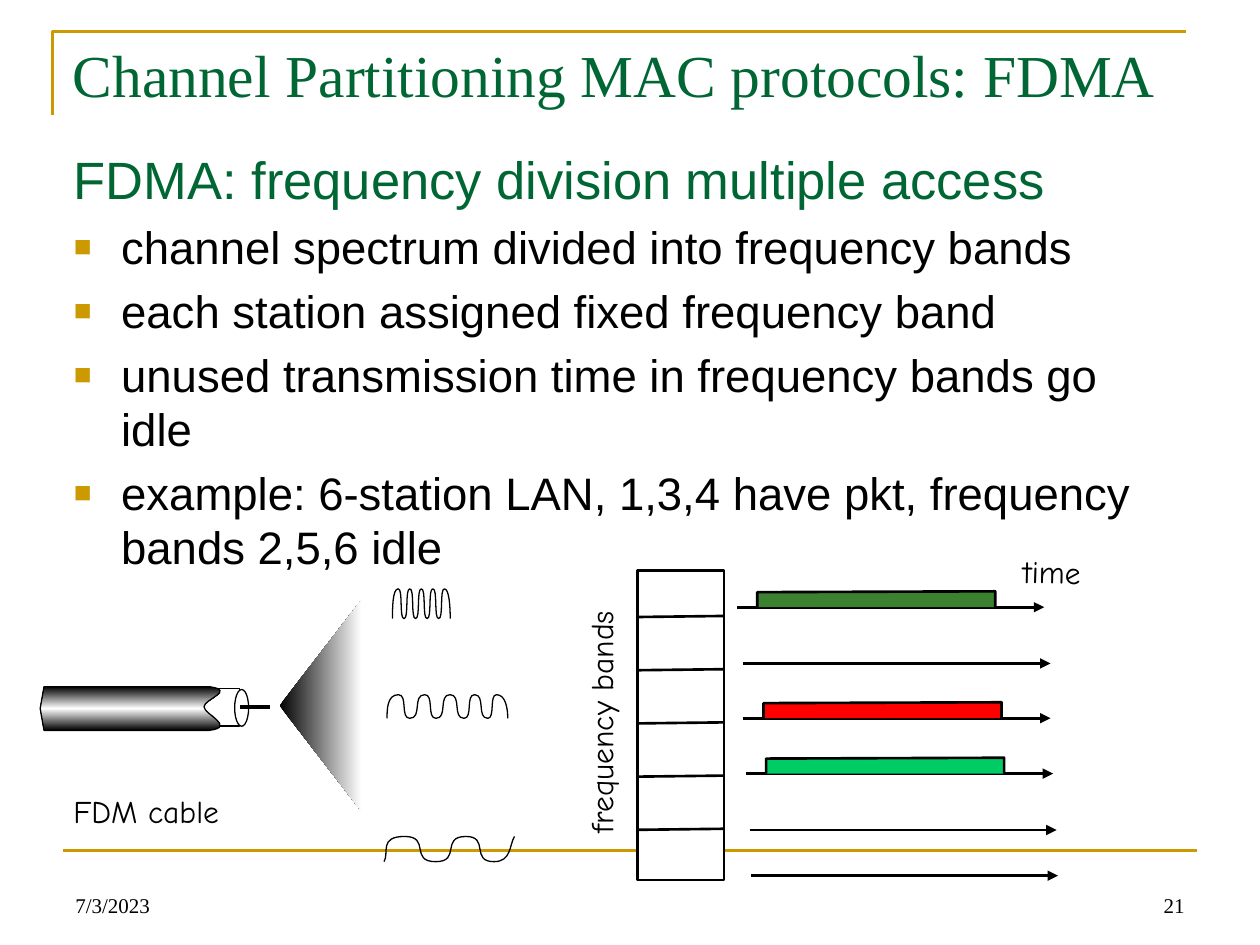
from lxml import etree
from pptx import Presentation
from pptx.dml.color import RGBColor
from pptx.enum import shapes as kinds, text as tx
from pptx.oxml import parse_xml
from pptx.oxml.ns import qn
from pptx.util import Pt

NS = 'xmlns:a="http://schemas.openxmlformats.org/drawingml/2006/main"'
GOLD, GREEN, BLACK, WHITE = "CC9900", "006633", "000000", "FFFFFF"
SERIF, SANS, HAND = "Times New Roman", "Arial", "Comic Neue"


def color(code):
    return RGBColor.from_string(code)


def pen(shape, code, width):
    shape.line.color.rgb = color(code)
    shape.line.width = Pt(width)


def paint(shape, fill=None, line=BLACK, width=1.5):
    """Flat fill (or none) and outline (or none), without shadow."""
    shape.shadow.inherit = False
    if fill:
        shape.fill.solid()
        shape.fill.fore_color.rgb = color(fill)
    else:
        shape.fill.background()
    if line:
        pen(shape, line, width)
    else:
        shape.line.fill.background()


def blend(shape, stops, angle):
    """Replace the fill by a linear gradient."""
    marks = "".join(f'<a:gs pos="{at * 1000}"><a:srgbClr val="{code}"/></a:gs>'
                    for at, code in stops)
    grad = parse_xml(f'<a:gradFill {NS}><a:gsLst>{marks}</a:gsLst>'
                     f'<a:lin ang="{angle * 60000}" scaled="0"/></a:gradFill>')
    props = shape.element.spPr
    props.replace(props.find(qn("a:solidFill")), grad)


def rule(slide, x1, y1, x2, y2, code=BLACK, width=1.5, arrow=False):
    line = slide.shapes.add_connector(kinds.MSO_CONNECTOR.STRAIGHT,
                                      Pt(x1), Pt(y1), Pt(x2), Pt(y2))
    pen(line, code, width)
    if arrow:
        etree.SubElement(line.line._get_or_add_ln(), qn("a:tailEnd"), type="triangle")
    etree.SubElement(line.element.spPr, qn("a:effectLst"))


def block(slide, kind, x, y, w, h, **look):
    shape = slide.shapes.add_shape(kind, Pt(x), Pt(y), Pt(w), Pt(h))
    paint(shape, WHITE, **look)


def trace(slide, x, y, start, steps, close=False, **look):
    """Outline relative to (x, y); a step is [point] or [control, control, point]."""
    def spot(point):
        return Pt(x + point[0]), Pt(y + point[1])

    draft = slide.shapes.build_freeform(*spot(start), scale=1.0)
    draft.add_line_segments([spot(p) for step in steps for p in step], close=close)
    shape = draft.convert_to_shape()
    # Join the three legs of each curved step into one cubic
    legs = iter(list(shape.element.spPr.iter(qn("a:lnTo"))))
    for step in steps:
        first, *rest = [next(legs) for _ in step]
        if rest:
            first.tag = qn("a:cubicBezTo")
            for leg in rest:
                first.append(leg[0])
                leg.getparent().remove(leg)
    paint(shape, **look)
    return shape


def style(par, size, font, code):
    par.font.size = Pt(size)
    par.font.name = font
    par.font.color.rgb = color(code)


def label(slide, words, x, y, w, h, size=18, font=HAND, turn=0,
          align=tx.PP_ALIGN.LEFT, anchor=tx.MSO_ANCHOR.TOP):
    box = slide.shapes.add_textbox(Pt(x), Pt(y), Pt(w), Pt(h))
    box.rotation = turn
    frame = box.text_frame
    frame.word_wrap = False
    frame.vertical_anchor = anchor
    par = frame.paragraphs[0]
    par.text = words
    par.alignment = align
    style(par, size, font, BLACK)


def place(holder, x, y, w, h):
    holder.left, holder.top, holder.width, holder.height = Pt(x), Pt(y), Pt(w), Pt(h)
    frame = holder.text_frame
    frame.word_wrap = True
    frame.auto_size = tx.MSO_AUTO_SIZE.NONE
    frame.vertical_anchor = tx.MSO_ANCHOR.TOP
    return frame


def border(slide, x, y, w, h):
    # Corner at top left, rule and footer at bottom
    trace(slide, x, y, (0, 48), [[(0, 0)], [(w, 0)]], line=GOLD)
    rule(slide, x + 6, y + h, x + 6 + w, y + h, GOLD)
    foot = dict(y=y + h + 5.7, w=168, h=36, size=12, font=SERIF,
                anchor=tx.MSO_ANCHOR.BOTTOM)
    label(slide, "7/3/2023", x=x + 6, **foot)
    label(slide, "21", x=x + w - 162, align=tx.PP_ALIGN.RIGHT, **foot)


def title(slide, words, x, y, w, h):
    par = place(slide.shapes.title, x, y, w, h).paragraphs[0]
    par.text = words
    par.alignment = tx.PP_ALIGN.LEFT
    style(par, 34, SERIF, GREEN)


def body(slide, head, items, x, y, w, h):
    frame = place(slide.placeholders[1], x, y, w, h)
    for i, words in enumerate([head] + items):
        par = frame.add_paragraph() if i else frame.paragraphs[0]
        par.text = words
        style(par, 26 if i else 30, SANS, BLACK if i else GREEN)
        par.space_before = Pt(5.5 if i else 6)
        par.line_spacing = Pt(31 if i else 36)
        props = par._p.get_or_add_pPr()
        props.set("marL", str(Pt(27)))
        props.set("indent", str(Pt(-27)))
        marks = (f'<a:buClr {NS}><a:srgbClr val="{GOLD}"/></a:buClr>',
                 f'<a:buSzPct {NS} val="65000"/>', f'<a:buFont {NS} typeface="{SANS}"/>',
                 f'<a:buChar {NS} char="■"/>') if i else (f'<a:buNone {NS}/>',)
        for mark in marks:
            props.append(parse_xml(mark))


def bands(slide, x, y, w, h):
    # Stack of six bands
    block(slide, kinds.MSO_SHAPE.RECTANGLE, x, y, w, h)
    for i in range(5):
        at = y + 26.4 + 30.4 * i
        rule(slide, x, at + 0.3, x + w, at - 0.3)
    # Time axis of each band, with a bar where a packet is sent
    axes = [(56.9, 21.1, "3B812F"), (60.5, 53.2, None), (60.5, 84.5, "FF0000"),
            (62, 116.2, "00CC66"), (64, 148.4, None), (64.8, 174.5, None)]
    for dx, dy, fill in axes:
        rule(slide, x + dx, y + dy, x + dx + 175.5, y + dy, arrow=True)
        if fill:
            trace(slide, x + dx + 11.5, y + dy, (0, 0),
                  [[(0, -8.6)], [(136, -9.1)], [(136, 0)]], fill=fill)
    label(slide, "frequency bands", x - 97.2, y + 66.5, 152.6, 28.8, turn=270)
    label(slide, "time", x + 213.1, y - 13.7, 51.8, 28.8, turn=1.1)


def cable(slide, x, y):
    # Cone of light
    cone = trace(slide, x, y, (183.6, -49.7), [[(136.8, 10.8)], [(183.6, 71.3)]],
                 close=True, fill=WHITE, line=None)
    blend(cone, [(0, BLACK), (100, WHITE)], 0)
    # Core, torn jacket, end and wire
    block(slide, kinds.MSO_SHAPE.RECTANGLE, x + 93.1, y + 1, 20.9, 21.6, width=0.75)
    edge = [[(0, 12.5)], [(2.2, 25)], [(96.5, 25)],
            [(112.3, 23), (93.6, 15.8), (93.6, 11.5)],
            [(93.6, 7.2), (112.3, 2.2), (96.5, 0)]]
    jacket = trace(slide, x, y, (2.2, 0), edge, close=True, fill=WHITE, width=0.75)
    blend(jacket, [(0, BLACK), (50, WHITE), (100, BLACK)], 90)
    block(slide, kinds.MSO_SHAPE.OVAL, x + 111.1, y + 1.6, 8, 21, width=0.75)
    rule(slide, x + 114.1, y + 11.5, x + 131.3, y + 11.5, width=2.25)
    label(slide, "FDM cable", x + 11.8, y + 56.9, 103.7, 28.8)


def wave(slide, x, y, h, xs, lean=0):
    """Swings between bottom and top at each of xs; lean tilts the outer ends."""
    ends = [(px, 0 if i % 2 else h) for i, px in enumerate(xs)]
    last = len(ends) - 2
    steps = []
    for i, (a, d) in enumerate(zip(ends, ends[1:])):
        pull = 0.85 * (d[0] - a[0])
        b, c = (a[0] + pull, a[1]), (d[0] - pull, d[1])
        if i == 0:
            b, c = (a[0] + lean, 0.65 * h), (a[0] - lean, d[1])
        elif i == last:
            c = (d[0] - lean, 0.35 * a[1] + 0.65 * d[1])
        steps.append([b, c, d])
    trace(slide, x, y, ends[0], steps, width=0.75)


def main():
    deck = Presentation()
    deck.slide_width, deck.slide_height = Pt(720), Pt(540)
    slide = deck.slides.add_slide(deck.slide_layouts[1])
    border(slide, 30, 18, 648, 468)
    title(slide, "Channel Partitioning MAC protocols: FDMA", 34.5, 18, 663, 90)
    body(slide, "FDMA: frequency division multiple access",
         ["channel spectrum divided into frequency bands",
          "each station assigned fixed frequency band",
          "unused transmission time in frequency bands go idle",
          "example: 6-station LAN, 1,3,4 have pkt, frequency bands 2,5,6 idle"],
         35, 80.3, 647.3, 365.8)
    bands(slide, 364.3, 325.9, 49.5, 177)
    cable(slide, 23, 392.4)
    # Signals from high to low frequency
    wave(slide, 224.3, 336.5, 17, [3.3 * i for i in range(11)])
    wave(slide, 221.2, 397, 13.5, [0, 6.5, 13, 21.6, 28, 36, 44, 50, 57.6, 62.6, 69])
    wave(slide, 219.5, 478, 14.4, [0, 11.7, 29.5, 46.8, 62.8, 74.5], lean=3)
    deck.save("out.pptx")


if __name__ == "__main__":
    main()
